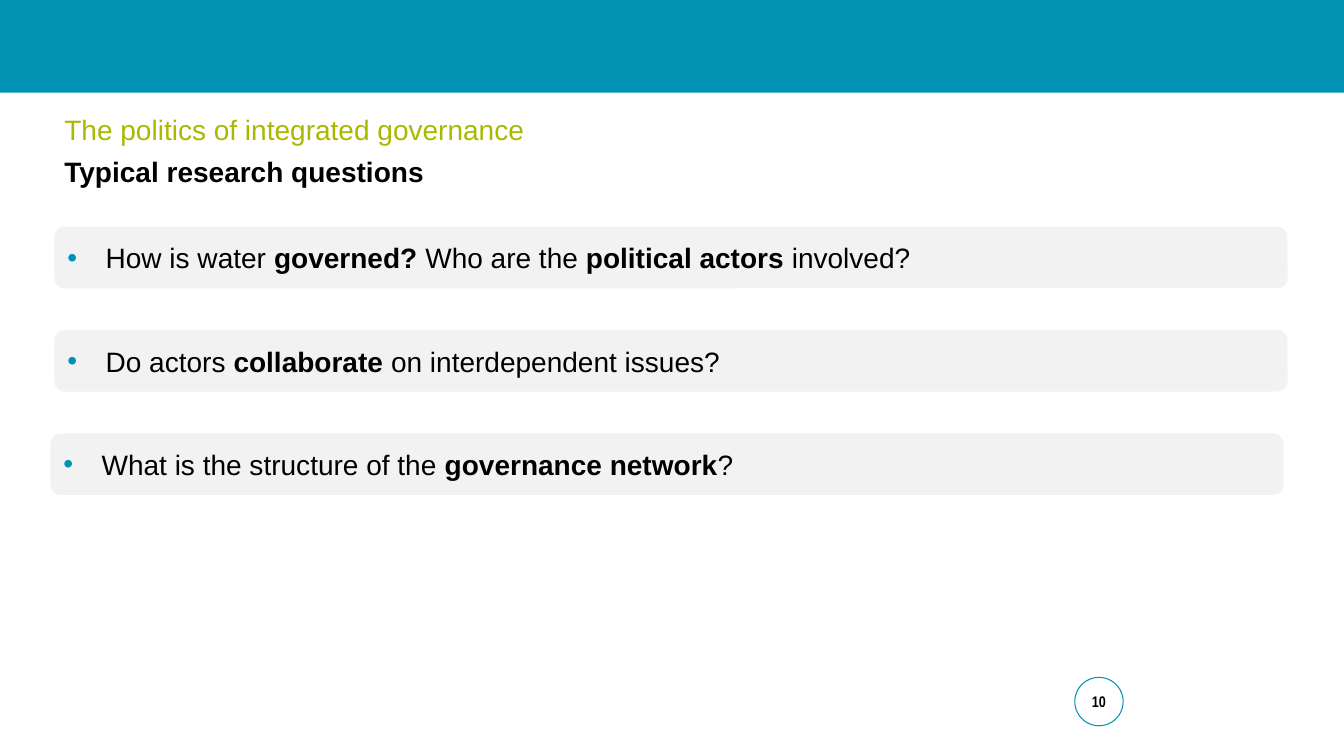
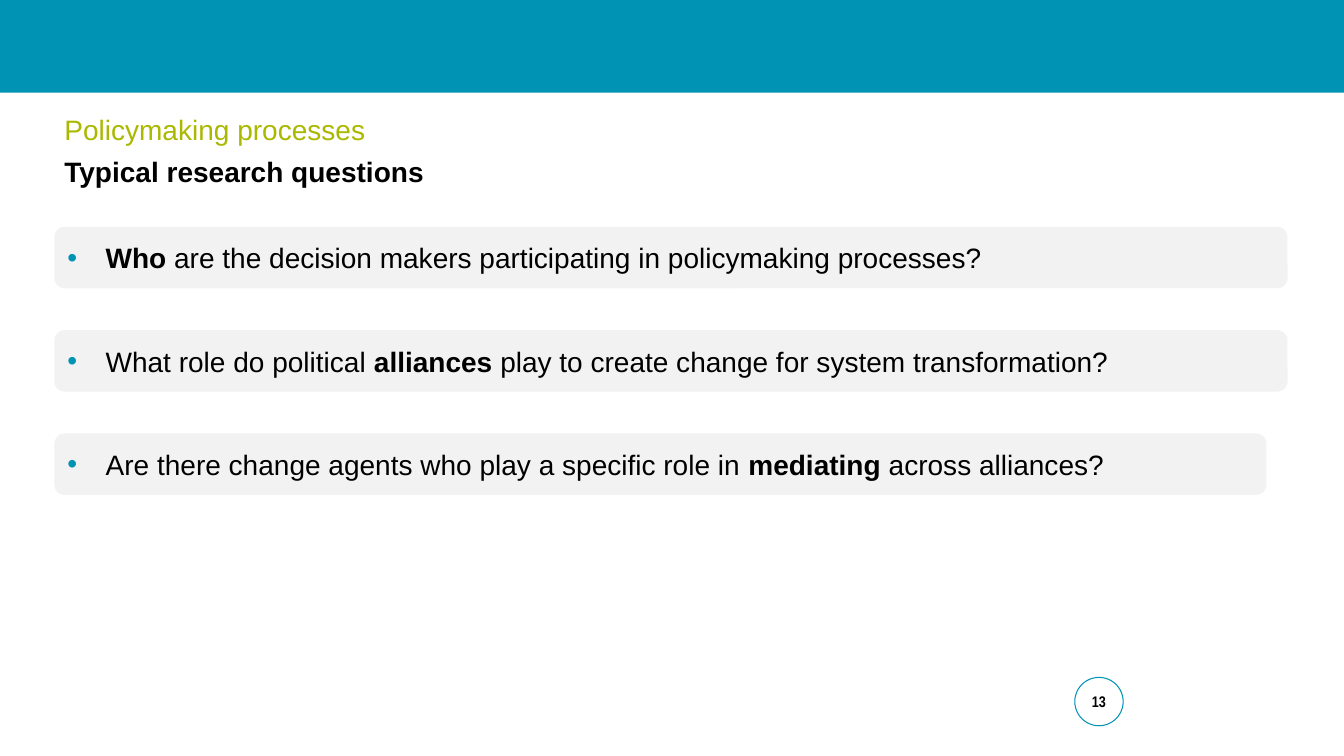
from lxml.etree import SubElement
from pptx import Presentation
from pptx.dml.color import RGBColor
from pptx.enum.shapes import MSO_SHAPE as Preset
from pptx.enum.text import MSO_ANCHOR as Anchor, PP_ALIGN as Align
from pptx.oxml.ns import qn
from pptx.util import Inches, Pt

WIDTH, HEIGHT = 13.33, 7.5
LEFT = 0.54
BAR_WIDTH, BAR_HEIGHT = 12.23, 0.61
FIRST_BAR, LAST_BAR = 2.25, 4.3
INDENT = 0.38
COLOURS = {
    "band": "0093B3",
    "topic": "ABB800",
    "bar": "F2F2F2",
    "text": "000000",
    "paper": "FFFFFF",
}
SUBTITLE = "Typical research questions"

SLIDES = [
    {
        "topic": "The politics of integrated governance",
        "number": "10",
        "last_bar": (0.5, BAR_WIDTH),
        "questions": [
            [("How is water ", False), ("governed? ", True), ("Who are the ", False),
             ("political actors", True), (" involved?", False)],
            [("Do actors ", False), ("collaborate ", True),
             ("on interdependent issues?", False)],
            [("What is the structure of the ", False), ("governance network", True),
             ("?", False)],
        ],
    },
    {
        "topic": "Policymaking processes",
        "number": "13",
        "last_bar": (LEFT, 12.02),
        "questions": [
            [("Who", True),
             (" are the decision makers participating in policymaking processes?", False)],
            [("What role do political ", False), ("alliances ", True),
             ("play to create change for system transformation?", False)],
            [("Are there change agents who play a specific role in ", False),
             ("mediating", True), (" across alliances?", False)],
        ],
    },
]


def colour(name):
    return RGBColor.from_string(COLOURS[name])


def add_run(paragraph, text, bold=False, ink="text", size=20, font="Arial"):
    run = paragraph.add_run()
    run.text = text
    run.font.name = font
    run.font.size = Pt(size)
    run.font.bold = bold
    run.font.color.rgb = colour(ink)


def add_panel(slide, preset, box, fill, line=None):
    shape = slide.shapes.add_shape(preset, *map(Inches, box))
    shape.shadow.inherit = False
    shape.fill.solid()
    shape.fill.fore_color.rgb = colour(fill)
    if line:
        shape.line.color.rgb = colour(line)
        shape.line.width = Pt(0.75)
    else:
        shape.line.fill.background()
    shape.text_frame.word_wrap = True
    shape.text_frame.vertical_anchor = Anchor.MIDDLE
    return shape


def add_bullet(paragraph):
    properties = paragraph._p.get_or_add_pPr()
    properties.set("marL", str(Inches(INDENT)))
    properties.set("indent", str(-Inches(INDENT)))
    bullet_colour = SubElement(properties, qn("a:buClr"))
    SubElement(bullet_colour, qn("a:srgbClr"), val=COLOURS["band"])
    SubElement(properties, qn("a:buFont"), typeface="Arial")
    SubElement(properties, qn("a:buChar"), char="•")


def add_heading(slide, box, topic):
    frame = slide.shapes.add_textbox(*map(Inches, box)).text_frame
    frame.word_wrap = True
    add_run(frame.paragraphs[0], topic, ink="topic")
    paragraph = frame.add_paragraph()
    paragraph.space_before = Pt(6)
    add_run(paragraph, SUBTITLE, bold=True)


def add_question(slide, box, runs):
    bar = add_panel(slide, Preset.ROUNDED_RECTANGLE, box, "bar")
    paragraph = bar.text_frame.paragraphs[0]
    paragraph.alignment = Align.LEFT
    add_bullet(paragraph)
    for text, bold in runs:
        add_run(paragraph, text, bold)


def add_questions(slide, questions, last_bar):
    pitch = (LAST_BAR - FIRST_BAR) / (len(questions) - 1)
    bars = [(LEFT, BAR_WIDTH)] * (len(questions) - 1) + [last_bar]
    for row, (runs, (left, width)) in enumerate(zip(questions, bars)):
        add_question(slide, (left, FIRST_BAR + row * pitch, width, BAR_HEIGHT), runs)


def add_page_number(slide, box, number):
    circle = add_panel(slide, Preset.OVAL, box, "paper", "band")
    frame = circle.text_frame
    frame.margin_left = frame.margin_right = 0
    frame.margin_top = frame.margin_bottom = 0
    paragraph = frame.paragraphs[0]
    paragraph.alignment = Align.CENTER
    add_run(paragraph, number, bold=True, size=11, font="Arial Narrow")


def add_question_slide(presentation, content):
    slide = presentation.slides.add_slide(presentation.slide_layouts[6])
    add_panel(slide, Preset.RECTANGLE, (0, 0, WIDTH, 0.92), "band")
    add_heading(slide, (LEFT, 1.07, 11.73, 0.82), content["topic"])
    add_questions(slide, content["questions"], content["last_bar"])
    add_page_number(slide, (10.66, 6.72, 0.48, 0.48), content["number"])


def main():
    presentation = Presentation()
    presentation.slide_width = Inches(WIDTH)
    presentation.slide_height = Inches(HEIGHT)
    for content in SLIDES:
        add_question_slide(presentation, content)
    presentation.save("out.pptx")


if __name__ == "__main__":
    main()
